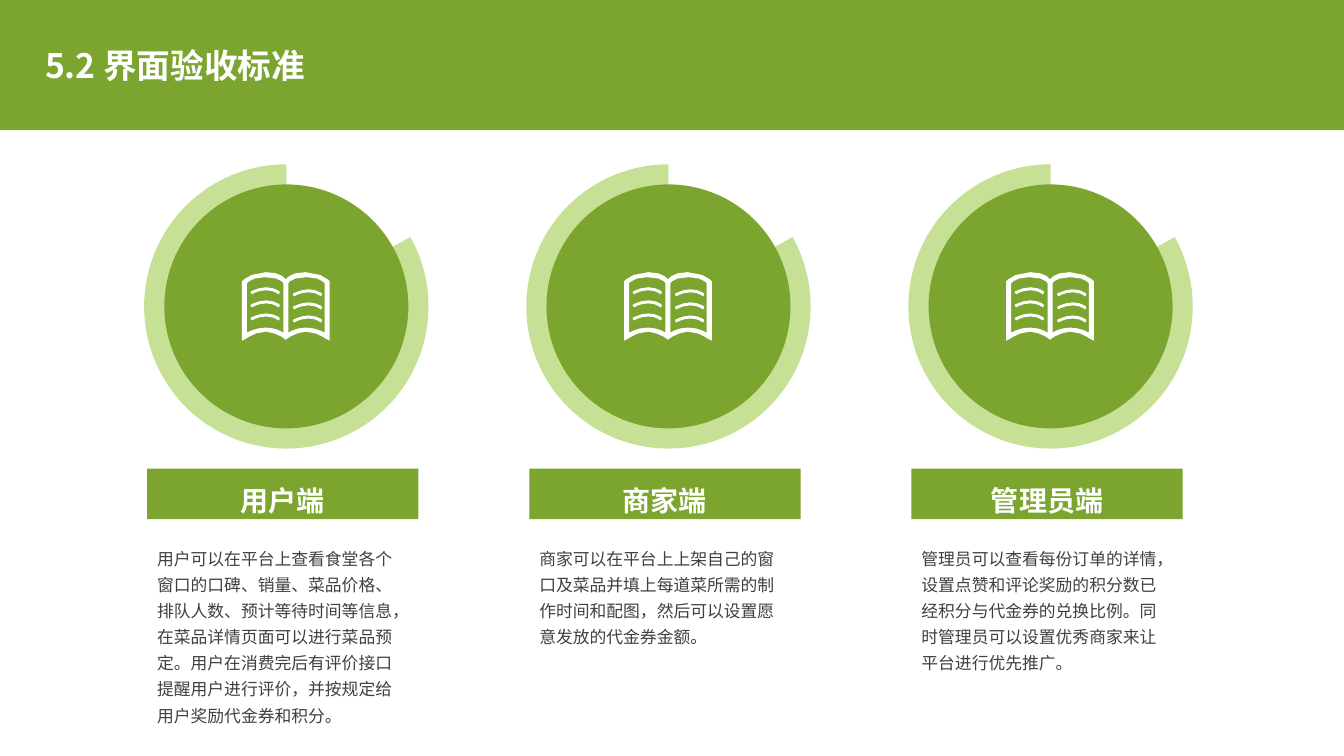
from dataclasses import dataclass

from pptx import Presentation
from pptx import util as u
from pptx.dml.color import RGBColor
from pptx.enum import shapes, text
from pptx.oxml.ns import qn


@dataclass(frozen=True)
class Theme:
    """Colours, type sizes and font of the deck."""
    green: str = "7BA52F"
    pale: str = "C6E195"
    white: str = "FFFFFF"
    ink: str = "404040"
    font: str = "Noto Sans CJK SC"
    title: int = 24
    label: int = 20
    body: int = 12
    leading: float = 1.56


THEME = Theme()

ROLES = [
    ("用户端", "用户可以在平台上查看食堂各个窗口的口碑、销量、菜品价格、排队人数、预计等待时间等信息，"
            "在菜品详情页面可以进行菜品预定。用户在消费完后有评价接口提醒用户进行评价，"
            "并按规定给用户奖励代金券和积分。"),
    ("商家端", "商家可以在平台上上架自己的窗口及菜品并填上每道菜所需的制作时间和配图，"
            "然后可以设置愿意发放的代金券金额。"),
    ("管理员端", "管理员可以查看每份订单的详情，设置点赞和评论奖励的积分数已经积分与代金券的兑换比例。"
             "同时管理员可以设置优秀商家来让平台进行优先推广。"),
]

BOOK_WIDTH = 87
COVER_HALF = [
    [(43.5, 7)],
    [(41, 4), (36, 0), (24, 0)],
    [(5, 1), (1, 9), (0, 9)],
    [(0, 68)],
    [(4, 66)],
    [(4, 66), (13, 59), (24, 59)],
    [(33, 60), (40, 64), (43.5, 67)],
]
PAGE_HOLE = [
    [(41, 60)],
    [(38, 58), (32, 55), (23.5, 55)],
    [(15, 55), (9, 58), (5, 60)],
    [(5, 11)],
    [(6, 10), (10, 5), (23, 5)],
    [(37, 5), (41, 10), (41, 11)],
]
TEXT_LINE = [
    [(37, 19)],
    [(37, 19), (32, 15), (24, 15)],
    [(16, 15), (10, 19), (9, 19)],
    [(8.5, 20.5)],
    [(10, 22)],
    [(11, 21), (17, 18), (24, 18)],
    [(31, 18), (35, 21), (36, 22)],
    [(37.5, 20.5)],
]


def flatten(segments, steps=3):
    """Turn lines and cubic curves into a list of points."""
    points = []
    for segment in segments:
        if len(segment) == 1:
            points += segment
            continue
        corners = [points[-1]] + segment
        for step in range(1, steps + 1):
            t = step / steps
            weights = ((1 - t) ** 3, 3 * t * (1 - t) ** 2, 3 * t * t * (1 - t), t ** 3)
            points.append(tuple(sum(w * corner[axis] for w, corner in zip(weights, corners))
                                for axis in (0, 1)))
    return points


def mirror(points):
    """Reflect points across the spine of the book."""
    return [(BOOK_WIDTH - x, y) for x, y in reversed(points)]


def paint(shape, color):
    """Give a shape a flat fill without line or shadow."""
    shape.shadow.inherit = False
    shape.fill.solid()
    shape.fill.fore_color.rgb = RGBColor.from_string(color)
    shape.line.fill.background()
    return shape


def add_block(page, kind, color, left, top, width, height):
    """Add a flat preset shape."""
    box = [u.Inches(value) for value in (left, top, width, height)]
    return paint(page.shapes.add_shape(kind, *box), color)


def add_textbox(page, left, top, width, height):
    """Add an empty text box."""
    return page.shapes.add_textbox(*[u.Inches(value) for value in (left, top, width, height)])


def write(shape, words, size, color, bold=False, align=text.PP_ALIGN.LEFT,
          anchor=text.MSO_ANCHOR.TOP, spacing=None):
    """Write one paragraph into a shape."""
    frame = shape.text_frame
    frame.word_wrap = True
    frame.auto_size = text.MSO_AUTO_SIZE.NONE
    frame.vertical_anchor = anchor
    para = frame.paragraphs[0]
    para.alignment = align
    para.line_spacing = spacing or u.Pt(size * THEME.leading)
    span = para.add_run()
    span.text = words
    span.font.name = THEME.font
    span.font.size = u.Pt(size)
    span.font.bold = bold
    span.font.color.rgb = RGBColor.from_string(color)
    east_asian = span.font._element.makeelement(qn("a:ea"), {"typeface": THEME.font})
    span.font._element.find(qn("a:latin")).addnext(east_asian)


def add_outline(group, contours, left, top):
    """Draw closed contours, in hundredths of an inch, as one white shape."""
    placed = [[(u.Inches(left + x / 100), u.Inches(top + y / 100)) for x, y in contour]
              for contour in contours]
    builder = group.shapes.build_freeform(*placed[0][0])
    builder.add_line_segments(placed[0][1:], close=True)
    for contour in placed[1:]:
        builder.move_to(*contour[0])
        builder.add_line_segments(contour[1:], close=True)
    paint(builder.convert_to_shape(), THEME.white)


def add_book(page, left, top):
    """Draw an open book with three text lines on each page."""
    group = page.shapes.add_group_shape()
    half, hole, line = flatten(COVER_HALF), flatten(PAGE_HOLE), flatten(TEXT_LINE)
    add_outline(group, [half + mirror(half)[1:-1], hole, mirror(hole)], left, top)
    for shift_x, shift_y in ((0, 0), (0.42, 0.02)):
        for row in range(3):
            add_outline(group, [line], left + shift_x, top + shift_y + row * 0.13)


def add_header(page, width, height):
    """Place the title on the green band above the white area."""
    page.background.fill.solid()
    page.background.fill.fore_color.rgb = RGBColor.from_string(THEME.green)
    band = 1.29
    add_block(page, shapes.MSO_SHAPE.RECTANGLE, THEME.white, 0, band, width, height - band)
    write(add_textbox(page, 0.35, 0.28, 5.8, 0.79), "5.2 界面验收标准", THEME.title,
          THEME.white, bold=True, anchor=text.MSO_ANCHOR.MIDDLE, spacing=0.9)


def add_role(page, left, top, label, body):
    """Place one role: ring, disc, book, label and description."""
    ring = add_block(page, shapes.MSO_SHAPE.PIE, THEME.pale, left, top, 2.82, 2.82)
    ring.adjustments[0], ring.adjustments[1] = 198.459, 162
    add_block(page, shapes.MSO_SHAPE.OVAL, THEME.green, left + 0.2, top + 0.2, 2.42, 2.42)
    add_book(page, left + 0.97, top + 1.07)
    write(add_textbox(page, left + 0.03, top + 3.7, 2.69, 1.91), body, THEME.body, THEME.ink)
    plate = add_block(page, shapes.MSO_SHAPE.RECTANGLE, THEME.green,
                      left + 0.03, top + 3.02, 2.69, 0.5)
    write(plate, label, THEME.label, THEME.white, bold=True, align=text.PP_ALIGN.CENTER)


def main():
    """Build the deck."""
    width, height = 13.33, 7.5
    deck = Presentation()
    deck.slide_width, deck.slide_height = u.Inches(width), u.Inches(height)
    page = deck.slides.add_slide(deck.slide_layouts[6])
    add_header(page, width, height)
    for index, (label, body) in enumerate(ROLES):
        add_role(page, 1.43 + index * 3.79, 1.63, label, body)
    deck.save("out.pptx")


if __name__ == "__main__":
    main()
